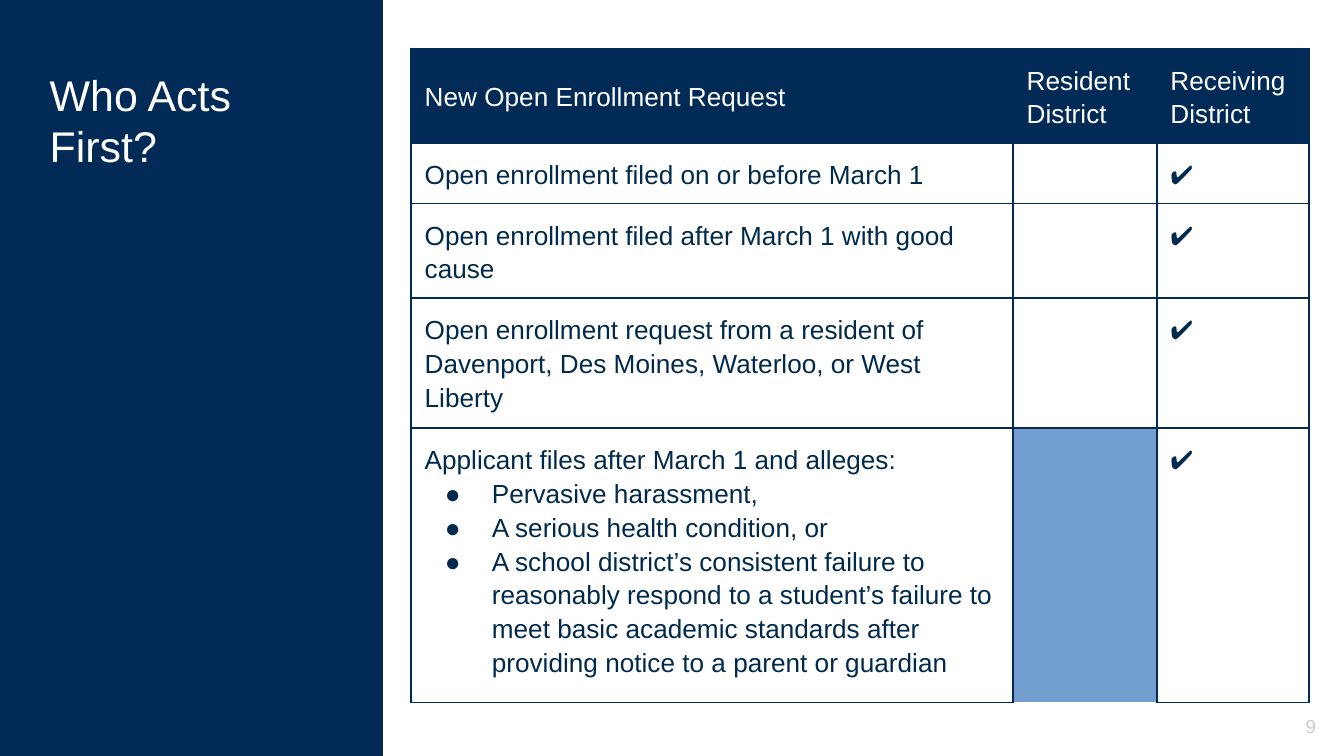
from lxml.etree import SubElement
from pptx import Presentation
from pptx.dml.color import RGBColor
from pptx.enum.shapes import MSO_SHAPE
from pptx.enum.text import MSO_ANCHOR as Anchor, MSO_AUTO_SIZE as AutoSize, PP_ALIGN as Align
from pptx.oxml.ns import qn
from pptx.util import Inches, Pt

COLORS = {"navy": "012A56", "ink": "002A4B", "white": "FFFFFF",
          "blue": "729FCF", "gray": "CCCCCC"}
FONT = "Arial"
PAGE_WIDTH = 10
PAGE_HEIGHT = PAGE_WIDTH * 9 / 16
CHECK = "✔"
HEADERS = ["New Open Enrollment Request", "Resident District", "Receiving District"]
REQUESTS = [
    ["Open enrollment filed on or before March 1"],
    ["Open enrollment filed after March 1 with good cause"],
    ["Open enrollment request from a resident of Davenport, Des Moines, "
     "Waterloo, or West Liberty"],
    ["Applicant files after March 1 and alleges:",
     "Pervasive harassment,",
     "A serious health condition, or",
     "A school district’s consistent failure to reasonably respond to a "
     "student’s failure to meet basic academic standards after providing "
     "notice to a parent or guardian"],
]
COLUMN_WIDTHS = [1.87, 2.61, 1.07, 1.13]
ROW_HEIGHTS = [0.7, 0.45, 0.7, 0.97, 2.04]


def rgb(name):
    return RGBColor.from_string(COLORS[name])


def add_bullet(para, size, color):
    props = para._p.get_or_add_pPr()
    props.set("marL", str(Inches(0.5)))
    props.set("indent", str(Inches(-0.35)))
    fill = SubElement(props, qn("a:buClr"))
    SubElement(fill, qn("a:srgbClr"), val=COLORS[color])
    SubElement(props, qn("a:buSzPts"), val=str(size * 100))
    SubElement(props, qn("a:buFont"), typeface=FONT)
    SubElement(props, qn("a:buChar"), char="●")


def write(frame, lines, size=14, color="ink", align=Align.LEFT, spacing=None):
    """Write the first line plain and any further lines as bullets."""
    for index, line in enumerate(lines):
        para = frame.paragraphs[0] if index == 0 else frame.add_paragraph()
        para.alignment = align
        if spacing:
            para.line_spacing = spacing
        if index:
            add_bullet(para, size, color)
        span = para.add_run()
        span.text = line
        span.font.name = FONT
        span.font.size = Pt(size)
        span.font.bold = False
        span.font.color.rgb = rgb(color)


def pad(target):
    for side in ("left", "top", "right", "bottom"):
        setattr(target, f"margin_{side}", Inches(0.1))


class SlideBuilder:
    def __init__(self, deck):
        self.page = deck.slides.add_slide(deck.slide_layouts[5])

    def frame(self, box, anchor):
        frame = box.text_frame
        frame.word_wrap = True
        frame.auto_size = AutoSize.NONE
        frame.vertical_anchor = anchor
        pad(frame)
        return frame

    def title(self, text, left, top, width, height):
        box = self.page.shapes.title
        box.left, box.top = Inches(left), Inches(top)
        box.width, box.height = Inches(width), Inches(height)
        write(self.frame(box, Anchor.TOP), [text], size=23, color="white")

    def panel(self, left, top, width, height):
        box = self.page.shapes.add_shape(
            MSO_SHAPE.RECTANGLE, Inches(left), Inches(top), Inches(width), Inches(height))
        box.shadow.inherit = False
        box.fill.solid()
        box.fill.fore_color.rgb = rgb("navy")
        box.line.fill.background()
        self.page.shapes.title.element.addprevious(box.element)

    def page_number(self, text, left, top, width, height):
        box = self.page.shapes.add_textbox(
            Inches(left), Inches(top), Inches(width), Inches(height))
        write(self.frame(box, Anchor.MIDDLE), [text], size=10, color="gray",
              align=Align.RIGHT)

    def table(self, left, top, widths, heights):
        table = self.page.shapes.add_table(
            len(heights), len(widths), Inches(left), Inches(top),
            Inches(sum(widths)), Inches(sum(heights))).table
        table.first_row = table.horz_banding = False
        for column, width in zip(table.columns, widths):
            column.width = Inches(width)
        for row, height in zip(table.rows, heights):
            row.height = Inches(height)
        return table

    def borders(self, cell):
        props = cell._tc.get_or_add_tcPr()
        for tag in ("a:lnL", "a:lnR", "a:lnT", "a:lnB"):
            line = SubElement(props, qn(tag), w=str(Pt(1)))
            fill = SubElement(line, qn("a:solidFill"))
            SubElement(fill, qn("a:srgbClr"), val=COLORS["navy"])

    def cell(self, cell, lines=(), fill="white", color="ink", anchor=Anchor.TOP, border=True):
        if border:
            self.borders(cell)
        cell.fill.solid()
        cell.fill.fore_color.rgb = rgb(fill)
        if lines:
            pad(cell)
            cell.vertical_anchor = anchor
            write(cell.text_frame, lines, color=color, spacing=1.15)


def main():
    deck = Presentation()
    deck.slide_width, deck.slide_height = Inches(PAGE_WIDTH), Inches(PAGE_HEIGHT)
    slide = SlideBuilder(deck)
    slide.panel(-0.02, 0, 2.87, 5.63)
    slide.title("Who Acts First?", 0.27, 0.41, 2.29, 4.8)

    table = slide.table(3.06, 0.36, COLUMN_WIDTHS, ROW_HEIGHTS)
    for row in range(len(ROW_HEIGHTS)):
        table.cell(row, 0).merge(table.cell(row, 1))
        slide.cell(table.cell(row, 1), fill="white" if row else "navy")
    for column, header in zip((0, 2, 3), HEADERS):
        slide.cell(table.cell(0, column), [header], fill="navy", color="white",
                   anchor=Anchor.MIDDLE)
    for row, lines in enumerate(REQUESTS, start=1):
        shaded = row == len(REQUESTS)
        slide.cell(table.cell(row, 0), lines)
        slide.cell(table.cell(row, 2), fill="blue" if shaded else "white",
                   border=not shaded)
        slide.cell(table.cell(row, 3), [CHECK])

    slide.page_number("9", 9.36, 5.19, 0.53, 0.43)
    deck.save("out.pptx")


if __name__ == "__main__":
    main()
